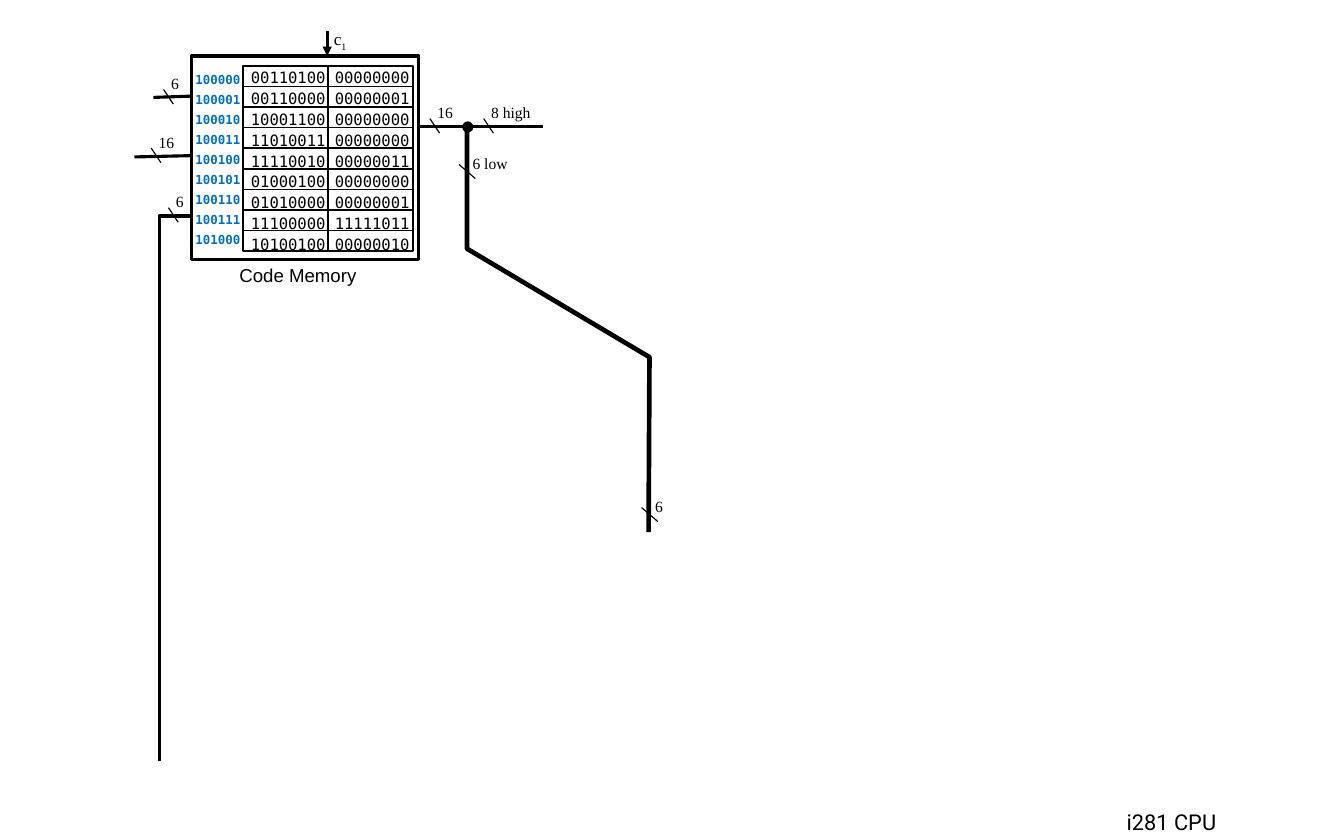
import pptx
import pptx.dml.color
import pptx.enum.shapes
import pptx.enum.text
import pptx.oxml.ns
import pptx.util
from lxml import etree

Cm = pptx.util.Cm
Pt = pptx.util.Pt
COLOURS = {"ink": "000000", "address": "0070C0"}
FONTS = {"label": "Times New Roman", "code": "DejaVu Sans Mono",
         "caption": "Arial", "footer": "Roboto"}
SHAPES = pptx.enum.shapes.MSO_SHAPE

MEMORY = [
    ("100000", "00110100 00000000"),
    ("100001", "00110000 00000001"),
    ("100010", "10001100 00000000"),
    ("100011", "11010011 00000000"),
    ("100100", "11110010 00000011"),
    ("100101", "01000100 00000000"),
    ("100110", "01010000 00000001"),
    ("100111", "11100000 11111011"),
    ("101000", "10100100 00000010"),
]


class Diagram:
    """Holds the drawing style and the current slide; lengths are in cm."""

    def __init__(self, slide):
        self.slide = slide
        self.ink = self.colour("ink")

    def colour(self, name):
        return pptx.dml.color.RGBColor.from_string(COLOURS[name])

    def text(self, box, paragraphs, font, size, colour="ink", bold=False,
             wrap=False, before=0, indent=0):
        """Each paragraph is a list of (text, is_subscript) runs."""
        shape = self.slide.shapes.add_textbox(*map(Cm, box))
        frame = shape.text_frame
        frame.word_wrap = wrap
        frame.auto_size = pptx.enum.text.MSO_AUTO_SIZE.SHAPE_TO_FIT_TEXT
        for index, runs in enumerate(paragraphs):
            paragraph = frame.add_paragraph() if index else frame.paragraphs[0]
            if before:
                paragraph.space_before = Pt(before)
            if indent:
                properties = paragraph._p.get_or_add_pPr()
                properties.set("marL", str(Cm(indent)))
                properties.set("indent", "0")
            for words, is_subscript in runs:
                run = paragraph.add_run()
                run.text = words
                run.font.name = FONTS[font]
                run.font.size = Pt(size)
                run.font.bold = bold
                run.font.color.rgb = self.colour(colour)
                if is_subscript:
                    run.font._element.set("baseline", "-25000")
        return shape

    def outline(self, shape, width, filled=False):
        shape.shadow.inherit = False
        if filled:
            shape.fill.solid()
            shape.fill.fore_color.rgb = self.ink
        else:
            shape.fill.background()
        shape.line.color.rgb = self.ink
        shape.line.width = Pt(width)
        return shape

    def shape(self, kind, box, width, filled=False):
        shape = self.slide.shapes.add_shape(kind, *map(Cm, box))
        return self.outline(shape, width, filled)

    def wire(self, points, width):
        start, *rest = [(Cm(x), Cm(y)) for x, y in points]
        builder = self.slide.shapes.build_freeform(*start)
        builder.add_line_segments(rest, close=False)
        return self.outline(builder.convert_to_shape(), width)

    def line(self, start, end, width, arrow=False):
        line = self.slide.shapes.add_connector(
            pptx.enum.shapes.MSO_CONNECTOR.STRAIGHT, *map(Cm, start + end))
        line.line.color.rgb = self.ink
        line.line.width = Pt(width)
        if arrow:
            etree.SubElement(line.line._get_or_add_ln(),
                             pptx.oxml.ns.qn("a:tailEnd"), type="triangle")
        etree.SubElement(line._element.spPr, pptx.oxml.ns.qn("a:effectLst"))
        return line

    def bus_width(self, x, y, words, box_width, vertical=False):
        """A slash across a wire, with the number of bits beside it."""
        run, rise, shift, lift = ((0.37, 0.32, 0.06, 0.36) if vertical
                                  else (0.22, 0.33, -0.08, 0.48))
        self.line((x, y), (x + run, y + rise), 0.75)
        self.text((x + shift, y - lift, box_width, 0.69),
                  [[(words, False)]], "label", 10)


def draw_memory(diagram):
    # Addresses and stored words
    diagram.text((3.58, 1.52, 2.44, 4.19),
                 [[(" " + address, False)] for address, word in MEMORY],
                 "code", 8, colour="address", bold=True, wrap=True,
                 before=3.2, indent=0.43)
    diagram.text((5.44, 1.42, 4.14, 4.39),
                 [[(word, False)] for address, word in MEMORY],
                 "code", 10, before=1.4)

    # Grid around the words
    left, top, width, height = 5.51, 1.5, 3.86, 4.19
    grid = diagram.shape(SHAPES.RECTANGLE, (left, top, width, height), 1.25)
    middle = left + width / 2
    divider = diagram.line((middle, top), (middle, top + height), 1)
    divider.begin_connect(grid, 0)
    divider.end_connect(grid, 2)
    for row in range(1, len(MEMORY)):
        y = top + height * row / len(MEMORY)
        diagram.line((left, y), (left + width, y), 1)

    # Frame, caption and control signal
    diagram.text((5.18, 5.87, 3.3, 0.76), [[("Code Memory", False)]],
                 "caption", 12, wrap=True)
    diagram.shape(SHAPES.RECTANGLE, (4.34, 1.27, 5.16, 4.62), 2)
    diagram.text((7.32, 0.53, 0.81, 0.74), [[("c", False), ("1", True)]],
                 "label", 11)
    diagram.line((7.42, 0.71), (7.42, 1.27), 1.75, arrow=True)


def draw_buses(diagram):
    # Inputs on the left
    diagram.wire([(3.48, 2.21), (4.37, 2.18)], 2)
    diagram.wire([(4.37, 3.53), (3.05, 3.56)], 2)
    diagram.wire([(3.61, 17.27), (3.61, 4.9), (4.37, 4.9)], 2)

    # Output on the right, with its branch
    diagram.line((9.5, 2.87), (12.32, 2.87), 2)
    diagram.shape(SHAPES.OVAL, (10.52, 2.79, 0.18, 0.18), 2, filled=True)
    diagram.wire([(14.71, 12.07), (14.73, 8.1), (10.59, 5.64), (10.59, 2.87)], 3)

    # Bus widths
    for x, y, words, box_width in [
            (3.71, 2.03, "6", 0.69), (3.82, 4.71, "6", 0.69),
            (3.43, 3.36, "16", 0.86), (9.75, 2.69, "16", 0.86),
            (10.97, 2.69, "8 high", 1.42)]:
        diagram.bus_width(x, y, words, box_width)
    diagram.bus_width(10.41, 3.73, "6 low", 1.32, vertical=True)
    diagram.bus_width(14.55, 11.51, "6", 0.69, vertical=True)


def main():
    presentation = pptx.Presentation()
    presentation.slide_width = Cm(30.48)
    presentation.slide_height = Cm(19.05)
    slide = presentation.slides.add_slide(presentation.slide_layouts[6])
    diagram = Diagram(slide)
    diagram.text((25.3, 18.21, 2.64, 0.86), [[("i281 CPU", False)]],
                 "footer", 14)
    draw_buses(diagram)
    draw_memory(diagram)
    presentation.save("out.pptx")


if __name__ == "__main__":
    main()
